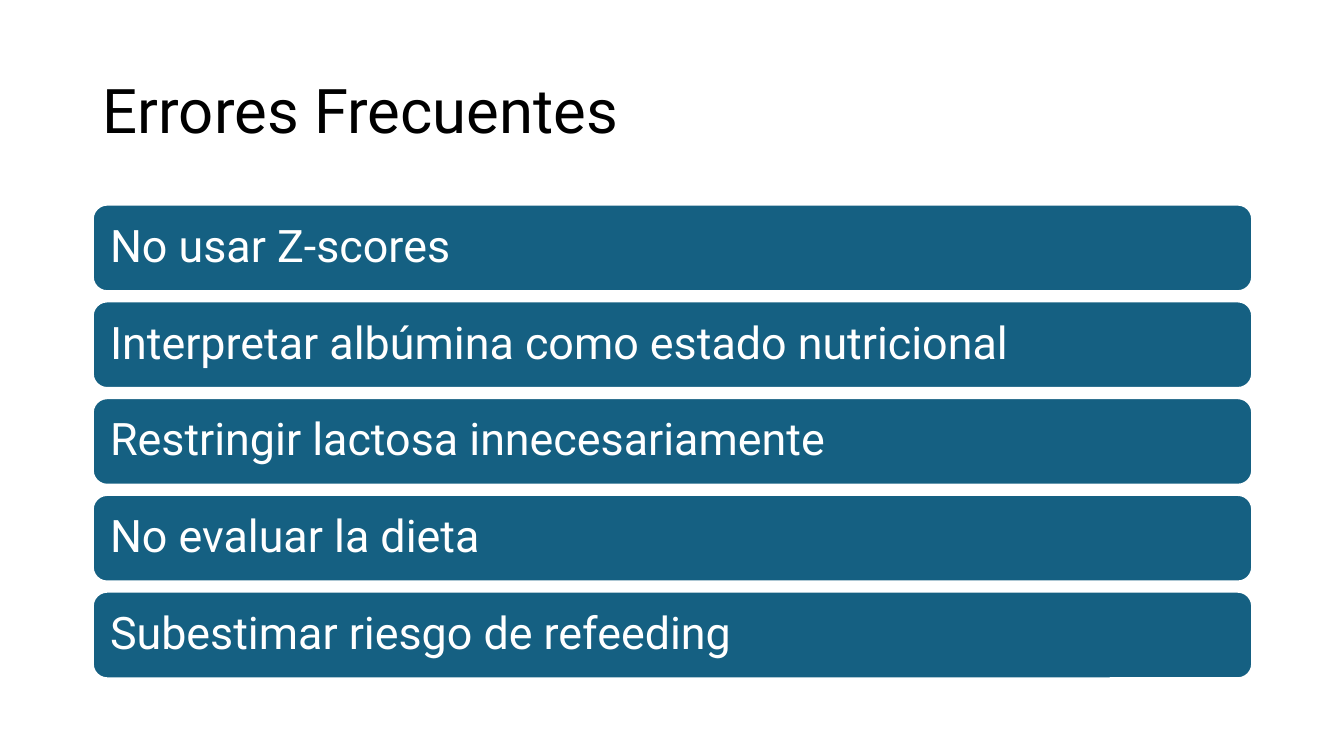
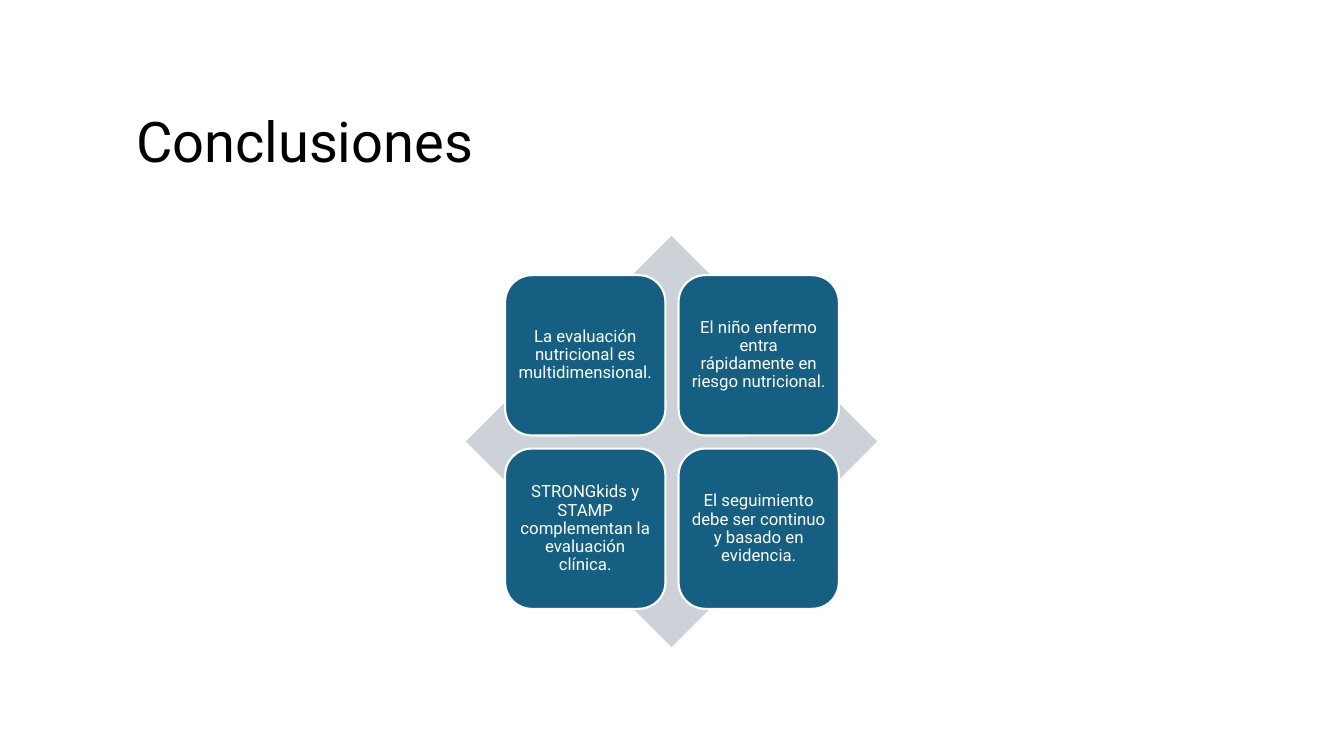
import pptx
import pptx.dml.color
import pptx.enum.shapes
import pptx.enum.text
import pptx.util

Inches = pptx.util.Inches
Shapes = pptx.enum.shapes.MSO_SHAPE
Anchor = pptx.enum.text.MSO_ANCHOR
Align = pptx.enum.text.PP_ALIGN

FONT = "Roboto"
BLACK, WHITE, BLUE, GREY = "000000", "FFFFFF", "156082", "CCD2D8"

ERRORS = [
    "No usar Z-scores",
    "Interpretar albúmina como estado nutricional",
    "Restringir lactosa innecesariamente",
    "No evaluar la dieta",
    "Subestimar riesgo de refeeding",
]
CONCLUSIONS = [
    "La evaluación nutricional es multidimensional.",
    "El niño enfermo entra rápidamente en riesgo nutricional.",
    "STRONGkids y STAMP complementan la evaluación clínica.",
    "El seguimiento debe ser continuo y basado en evidencia.",
]


def color(code):
    """Turn a hex string into a colour."""
    return pptx.dml.color.RGBColor.from_string(code)


def write(box, text, size, code, align=Align.LEFT, anchor=Anchor.MIDDLE):
    """Write one styled paragraph into a shape or placeholder."""
    frame = box.text_frame
    frame.word_wrap = True
    frame.auto_size = pptx.enum.text.MSO_AUTO_SIZE.NONE
    frame.vertical_anchor = anchor
    para = frame.paragraphs[0]
    para.alignment = align
    para.line_spacing = 0.9
    span = para.add_run()
    span.text = text
    span.font.name = FONT
    span.font.size = pptx.util.Pt(size)
    span.font.color.rgb = color(code)


def add_page(deck, title, place, size, anchor):
    """Add a title-only slide and format its title."""
    page = deck.slides.add_slide(deck.slide_layouts[5])
    box = page.shapes.title
    box.left, box.top, box.width, box.height = map(Inches, place)
    write(box, title, size, BLACK, anchor=anchor)
    return page


def add_block(page, kind, place, fill):
    """Add a flat filled shape without an outline."""
    block = page.shapes.add_shape(kind, *map(Inches, place))
    block.shadow.inherit = False
    block.fill.solid()
    block.fill.fore_color.rgb = color(fill)
    block.line.fill.background()
    return block


def add_card(page, place, text, size, margin, align):
    """Add a rounded blue card with a white outline and white text."""
    card = add_block(page, Shapes.ROUNDED_RECTANGLE, place, BLUE)
    card.line.color.rgb = color(WHITE)
    card.line.width = pptx.util.Pt(1.5)
    frame = card.text_frame
    frame.margin_left = frame.margin_right = Inches(margin)
    frame.margin_top = frame.margin_bottom = Inches(margin)
    write(card, text, size, WHITE, align)


def add_errors(deck):
    """Build the slide with a stack of frequent errors."""
    left, top, width, height, step = 0.92, 2.03, 11.5, 0.86, 0.96
    page = add_page(deck, "Errores Frecuentes", (left, 0.4, width, 1.45), 44, Anchor.MIDDLE)
    for row, text in enumerate(ERRORS):
        place = (left, top + row * step, width, height)
        add_card(page, place, text, 32, 0.13, Align.LEFT)


def add_conclusions(deck):
    """Build the slide with four conclusions over a diamond."""
    left, top, side, step = 5.01, 2.73, 1.59, 1.72
    page = add_page(deck, "Conclusiones", (1.25, 1.08, 10.83, 0.75), 40, Anchor.TOP)
    add_block(page, Shapes.DIAMOND, (4.62, 2.34, 4.08, 4.08), GREY)
    for index, text in enumerate(CONCLUSIONS):
        row, column = divmod(index, 2)
        place = (left + column * step, top + row * step, side, side)
        add_card(page, place, text, 12, 0.05, Align.CENTER)


def main():
    """Build and save the deck."""
    deck = pptx.Presentation()
    deck.slide_width, deck.slide_height = Inches(13.33), Inches(7.5)
    add_errors(deck)
    add_conclusions(deck)
    deck.save("out.pptx")


if __name__ == "__main__":
    main()
